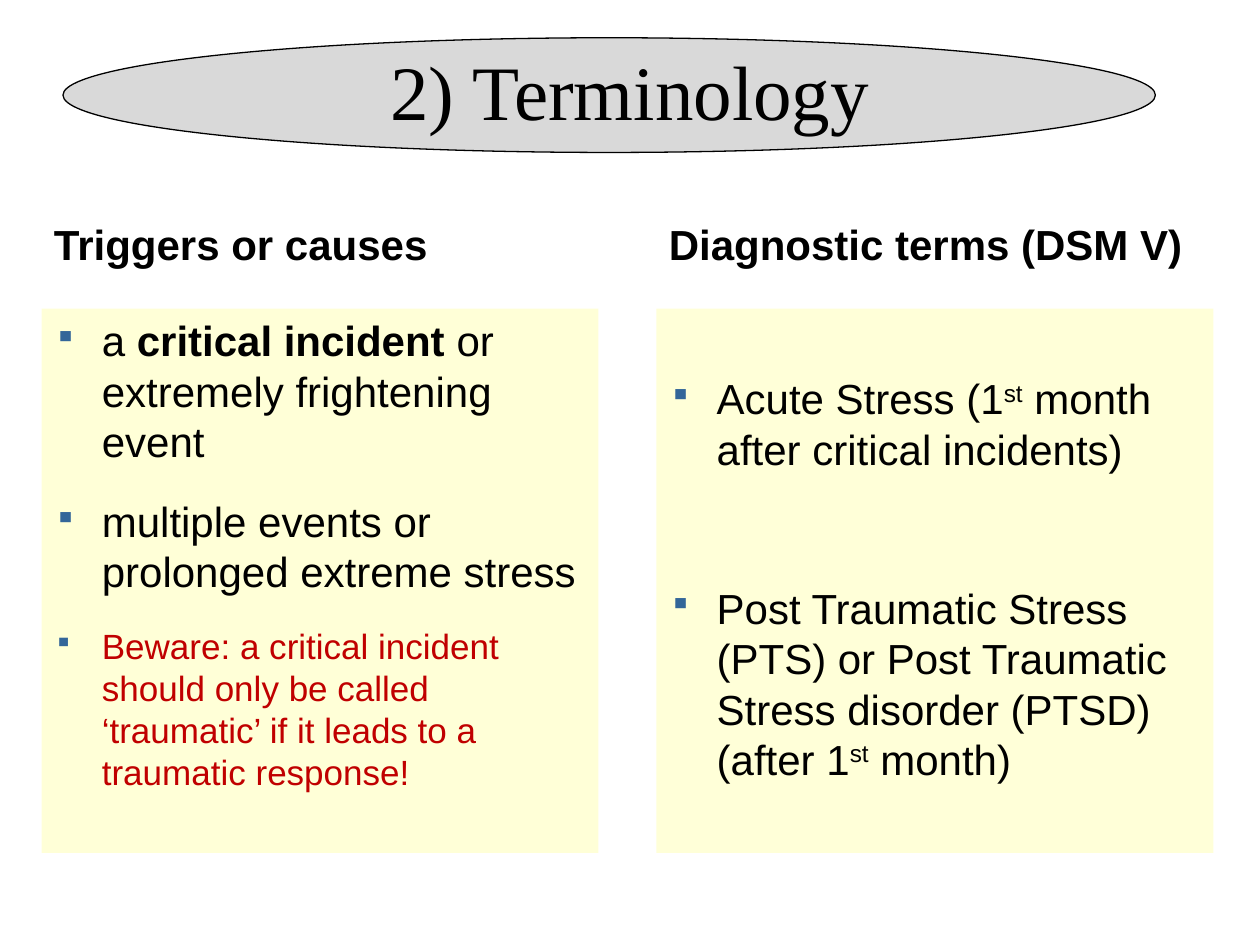
from dataclasses import dataclass

from lxml.etree import SubElement
from pptx import Presentation
from pptx.dml.color import RGBColor as RGB
from pptx.enum.shapes import MSO_SHAPE as SHAPE
from pptx.enum.text import MSO_ANCHOR as ANCHOR, PP_ALIGN as ALIGN
from pptx.oxml.ns import qn
from pptx.util import Inches, Pt


@dataclass(frozen=True)
class Theme:
    ink: RGB = RGB(0, 0, 0)
    paper: RGB = RGB(0xFF, 0xFF, 0xFF)
    oval: RGB = RGB(0xD9, 0xD9, 0xD9)
    panel: RGB = RGB(0xFF, 0xFF, 0xCC)
    warning: RGB = RGB(0xC0, 0, 0)
    bullet: RGB = RGB(0x33, 0x66, 0x99)
    title_font: str = "Times New Roman"
    body_font: str = "Arial"
    title_size: int = 44
    body_size: int = 24
    note_size: int = 20


@dataclass
class Item:
    """A bullet: runs are (text, style) pairs, style being "", "bold" or "super"."""
    runs: list
    size: int
    color: RGB
    before: float
    after: float = 12


class Deck:
    def __init__(self, s, theme):
        self.s, self.theme = s, theme

    def oval(self, x, y, w, h):
        sp = self.s.shapes.add_shape(SHAPE.OVAL, Inches(x), Inches(y), Inches(w), Inches(h))
        sp.shadow.inherit = False
        sp.fill.solid()
        sp.fill.fore_color.rgb = self.theme.oval
        sp.line.color.rgb = self.theme.ink
        sp.line.width = Pt(0.75)

    def box(self, x, y, w, h, fill=None, alpha=None):
        sp = self.s.shapes.add_textbox(Inches(x), Inches(y), Inches(w), Inches(h))
        sp.text_frame.word_wrap = True
        if fill is not None:
            sp.fill.solid()
            sp.fill.fore_color.rgb = fill
        if alpha is not None:
            color = sp.fill._xPr.find(qn("a:solidFill"))[0]
            SubElement(color, qn("a:alpha"), val=str(alpha * 1000))
        return sp.text_frame

    def run(self, p, text, size, font, color, style=""):
        r = p.add_run()
        r.text = text
        r.font.size, r.font.name = Pt(size), font
        r.font.color.rgb = color
        r.font.bold = style == "bold"
        if style == "super":
            r.font._element.set("baseline", "30000")

    def title(self, text, x, y, w, h):
        p = self.box(x, y, w, h).paragraphs[0]
        p.alignment = ALIGN.CENTER
        self.run(p, text, self.theme.title_size, self.theme.title_font, self.theme.ink)

    def heading(self, text, x, y, w, h):
        tf = self.box(x, y, w, h, self.theme.paper)
        tf.vertical_anchor = ANCHOR.BOTTOM
        self.run(tf.paragraphs[0], text, self.theme.body_size, self.theme.body_font,
                 self.theme.ink, "bold")

    def bullet(self, p):
        pPr = p._p.get_or_add_pPr()
        pPr.set("marL", str(Inches(0.38)))
        pPr.set("indent", str(-Inches(0.38)))
        SubElement(SubElement(pPr, qn("a:buClr")), qn("a:srgbClr"), val=str(self.theme.bullet))
        SubElement(pPr, qn("a:buSzPct"), val="75000")
        SubElement(pPr, qn("a:buChar"), char="▪")

    def panel(self, items, x, y, w, h, alpha, top_inset):
        tf = self.box(x, y, w, h, self.theme.panel, alpha)
        tf.margin_top = Inches(top_inset)
        for i, item in enumerate(items):
            p = tf.add_paragraph() if i else tf.paragraphs[0]
            self.bullet(p)
            p.space_before, p.space_after = Pt(item.before), Pt(item.after)
            for text, style in item.runs:
                self.run(p, text, item.size, self.theme.body_font, item.color, style)


def main():
    theme = Theme()
    prs = Presentation()
    prs.slide_width, prs.slide_height = Inches(10), Inches(7.5)
    deck = Deck(prs.slides.add_slide(prs.slide_layouts[6]), theme)

    deck.oval(0.5, 0.3, 8.67, 0.91)
    deck.title("2) Terminology", 0.5, 0.3, 9, 1.25)

    body, ink = theme.body_size, theme.ink
    triggers = [
        Item([("a ", ""), ("critical incident ", "bold"),
              ("or extremely frightening event", "")], body, ink, 0),
        Item([("multiple events or prolonged extreme stress", "")], body, ink, 4.8),
        Item([("Beware: a critical incident should only be called ‘traumatic’ "
               "if it leads to a traumatic response!", "")],
             theme.note_size, theme.warning, 4, 0),
    ]
    diagnoses = [
        Item([("Acute Stress (1", ""), ("st", "super"),
              (" month after critical incidents)", "")], body, ink, 0),
        Item([("Post Traumatic Stress (PTS) or Post Traumatic Stress disorder (PTSD) (after 1", ""),
              ("st", "super"), (" month)", "")], body, ink, 50),
    ]
    columns = [
        (0.33, "Triggers or causes", triggers, 78, 0.05),
        (5.21, "Diagnostic terms (DSM V)", diagnoses, 76, 0.51),
    ]
    for x, heading, items, alpha, top_inset in columns:
        deck.heading(heading, x, 1.48, 4.42, 0.7)
        deck.panel(items, x, 2.45, 4.42, 4.32, alpha, top_inset)

    prs.save("out.pptx")


if __name__ == "__main__":
    main()
